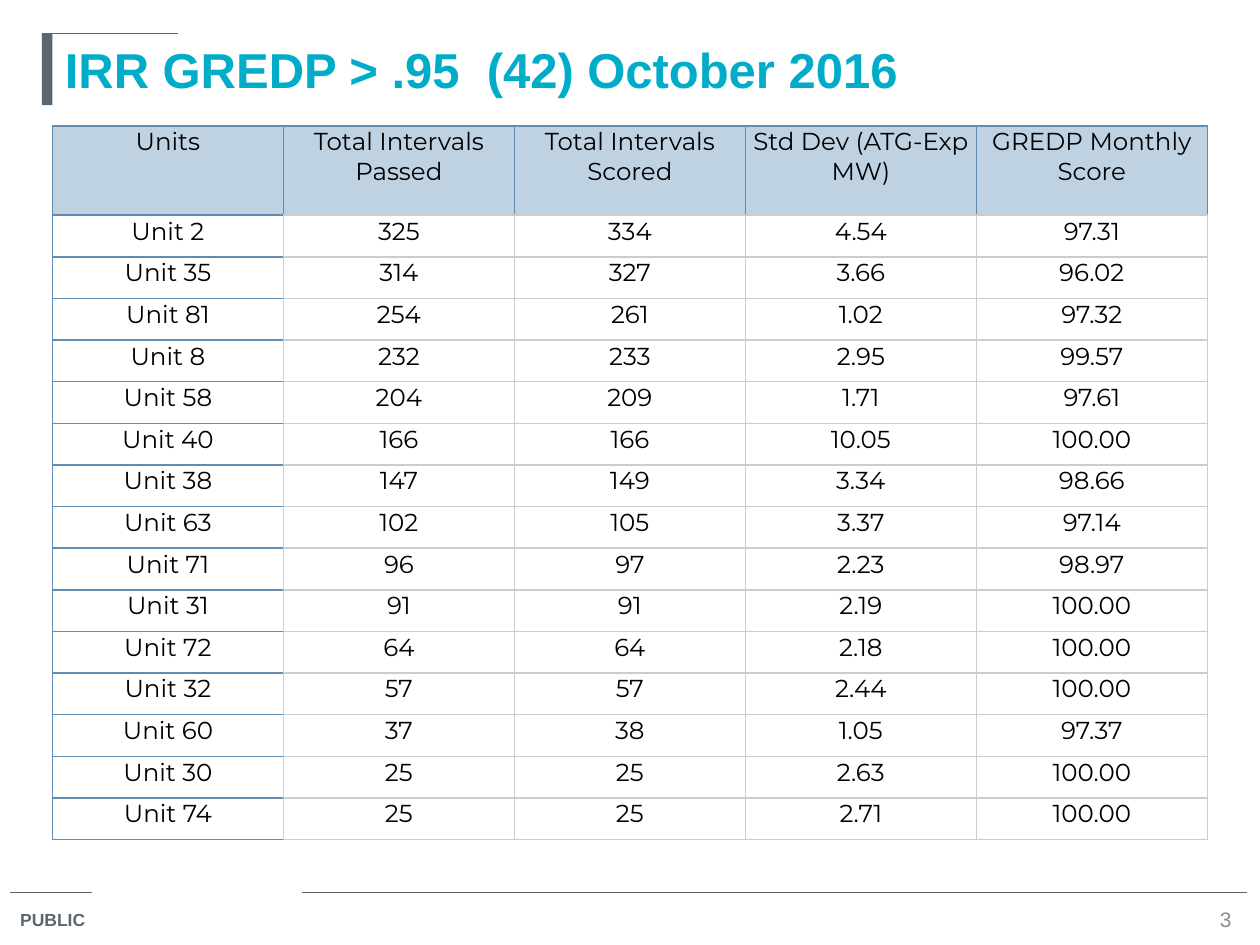
from lxml import etree
from pptx import Presentation
from pptx.dml.color import RGBColor
from pptx.enum.shapes import MSO_CONNECTOR, MSO_SHAPE
from pptx.enum.text import MSO_ANCHOR, PP_ALIGN
from pptx.oxml.ns import qn
from pptx.util import Pt

SLATE = RGBColor(0x5B, 0x67, 0x70)
CYAN = RGBColor(0x00, 0xAC, 0xC8)
GRAY = RGBColor(0x8C, 0x8C, 0x8C)
BLACK = RGBColor(0x00, 0x00, 0x00)
HEADER_FILL = RGBColor(0xBF, 0xD2, 0xE2)
BLUE_BORDER = RGBColor(0x60, 0x8B, 0xB4)
GRAY_BORDER = RGBColor(0xCC, 0xCC, 0xCC)

TITLE = "IRR GREDP > .95  (42) October 2016"
HEADERS = ["Units", "Total Intervals Passed", "Total Intervals Scored",
           "Std Dev (ATG-Exp MW)", "GREDP Monthly Score"]
UNITS = [
    ("Unit 2", "325", "334", "4.54", "97.31"),
    ("Unit 35", "314", "327", "3.66", "96.02"),
    ("Unit 81", "254", "261", "1.02", "97.32"),
    ("Unit 8", "232", "233", "2.95", "99.57"),
    ("Unit 58", "204", "209", "1.71", "97.61"),
    ("Unit 40", "166", "166", "10.05", "100.00"),
    ("Unit 38", "147", "149", "3.34", "98.66"),
    ("Unit 63", "102", "105", "3.37", "97.14"),
    ("Unit 71", "96", "97", "2.23", "98.97"),
    ("Unit 31", "91", "91", "2.19", "100.00"),
    ("Unit 72", "64", "64", "2.18", "100.00"),
    ("Unit 32", "57", "57", "2.44", "100.00"),
    ("Unit 60", "37", "38", "1.05", "97.37"),
    ("Unit 30", "25", "25", "2.63", "100.00"),
    ("Unit 74", "25", "25", "2.71", "100.00"),
]
# Horizontal rules: left, right, height on the slide
RULES = [(6, 52.5, 510), (172.8, 712.8, 510), (24, 102, 19.2)]

TABLE_LEFT, TABLE_TOP = 30, 72
COL_WIDTH, HEADER_HEIGHT, ROW_HEIGHT = 132, 51, 23.8


def style_font(p, name, size, color, bold=False):
    p.font.name, p.font.size, p.font.bold = name, Pt(size), bold
    p.font.color.rgb = color


def add_rule(slide, left, right, y):
    line = slide.shapes.add_connector(MSO_CONNECTOR.STRAIGHT, Pt(left), Pt(y), Pt(right), Pt(y))
    line.line.color.rgb = SLATE
    line.line.width = Pt(0.75)
    etree.SubElement(line._element.spPr, qn("a:effectLst"))


def add_text(slide, text, box, size, color, bold=False, wrap=True):
    tf = slide.shapes.add_textbox(*map(Pt, box)).text_frame
    tf.word_wrap = wrap
    p = tf.paragraphs[0]
    p.text = text
    style_font(p, "Arial", size, color, bold)
    return tf


def set_borders(cell, colors):
    """Draw 1 pt borders; colors are in the order left, right, top, bottom."""
    tc_pr = cell._tc.get_or_add_tcPr()
    for i, (side, color) in enumerate(zip("LRTB", colors)):
        ln = etree.Element(qn(f"a:ln{side}"), w=str(Pt(1)))
        fill = etree.SubElement(ln, qn("a:solidFill"))
        etree.SubElement(fill, qn("a:srgbClr"), val=str(color))
        tc_pr.insert(i, ln)


def border_colors(row, col):
    if row == 0:
        return [BLUE_BORDER] * 3 + [GRAY_BORDER if col else BLUE_BORDER]
    if col == 0:
        return BLUE_BORDER, GRAY_BORDER, BLUE_BORDER, BLUE_BORDER
    return [GRAY_BORDER] * 4


def add_score_table(slide):
    rows = [HEADERS, *UNITS]
    heights = [HEADER_HEIGHT] + [ROW_HEIGHT] * len(UNITS)
    table = slide.shapes.add_table(
        len(rows), len(HEADERS), Pt(TABLE_LEFT), Pt(TABLE_TOP),
        Pt(COL_WIDTH * len(HEADERS)), Pt(sum(heights))).table
    for column in table.columns:
        column.width = Pt(COL_WIDTH)
    for r, (values, height) in enumerate(zip(rows, heights)):
        table.rows[r].height = Pt(height)
        for c, value in enumerate(values):
            cell = table.cell(r, c)
            cell.margin_left = cell.margin_right = cell.margin_top = Pt(0.7)
            cell.margin_bottom = 0
            if r == 0:
                cell.fill.solid()
                cell.fill.fore_color.rgb = HEADER_FILL
            else:
                cell.fill.background()
            p = cell.text_frame.paragraphs[0]
            p.text = value
            p.alignment = PP_ALIGN.CENTER
            style_font(p, "Montserrat", 14, BLACK)
            set_borders(cell, border_colors(r, c))


def main():
    prs = Presentation()
    prs.slide_width, prs.slide_height = Pt(720), Pt(540)
    slide = prs.slides.add_slide(prs.slide_layouts[6])

    for rule in RULES:
        add_rule(slide, *rule)
    bar = slide.shapes.add_shape(MSO_SHAPE.RECTANGLE, Pt(24), Pt(19.2), Pt(6), Pt(41))
    bar.shadow.inherit = False
    bar.fill.solid()
    bar.fill.fore_color.rgb = SLATE
    bar.line.fill.background()

    add_text(slide, "PUBLIC", (4.5, 516.2, 55.4, 20), 10, SLATE, bold=True, wrap=False)
    number = add_text(slide, "3", (690, 517, 18, 16.5), 12, GRAY, wrap=False)
    number.vertical_anchor = MSO_ANCHOR.MIDDLE
    number.paragraphs[0].alignment = PP_ALIGN.CENTER
    add_text(slide, TITLE, (30, 19.2, 666, 52.5), 28, CYAN, bold=True)
    add_score_table(slide)

    prs.save("out.pptx")


if __name__ == "__main__":
    main()
